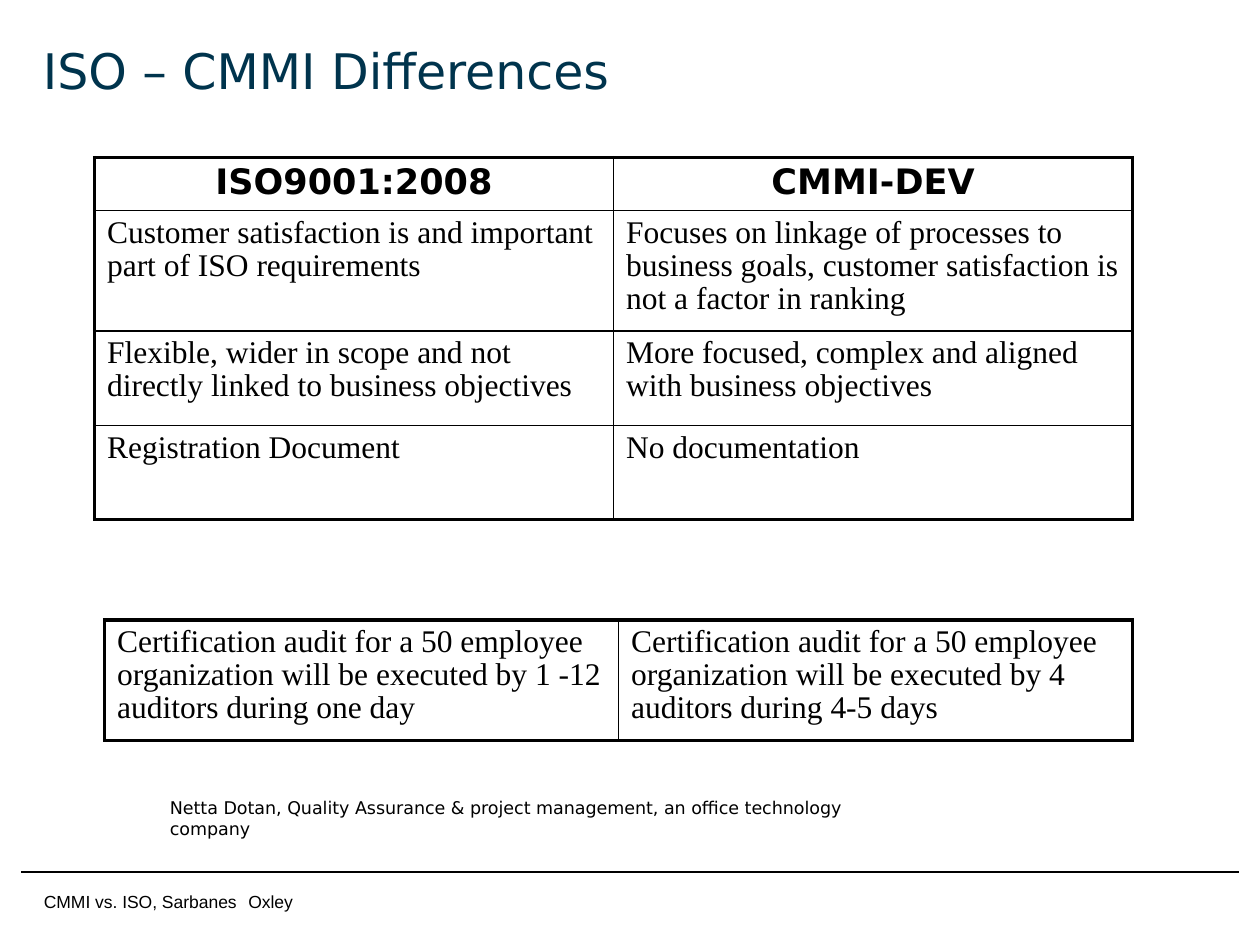
from dataclasses import dataclass

from lxml.etree import SubElement
from pptx import Presentation
from pptx.dml.color import RGBColor as Color
from pptx.enum.shapes import MSO_CONNECTOR as Link
from pptx.enum.text import MSO_ANCHOR as Anchor, MSO_AUTO_SIZE as Fit, PP_ALIGN as Align
from pptx.oxml.ns import qn
from pptx.util import Inches, Pt


@dataclass(frozen=True)
class Theme:
    """Colours, fonts, type sizes and line widths."""
    ink: str = "000000"
    navy: str = "00344D"
    sans: str = "DejaVu Sans"
    serif: str = "Times New Roman"
    plain: str = "Arial"
    title: int = 28
    gap: int = 24
    head: int = 20
    body: int = 18
    note: int = 10
    thick: float = 2.25
    thin: float = 1
    rule: float = 1.25
    lead: float = 0.95


T = Theme()
HEAD = {"name": T.sans, "size": Pt(T.head), "bold": True}
BODY = {"name": T.serif, "size": Pt(T.body), "bold": False}
NOTE = {"name": T.sans, "size": Pt(T.note)}
FOOT = {"name": T.plain, "size": Pt(T.note)}
GAP = {"name": T.plain, "size": Pt(T.gap)}
TITLE = {"name": T.sans, "size": Pt(T.title)}

DIFFS = [
    ("ISO9001:2008", "CMMI-DEV"),
    ("Customer satisfaction is and important part of ISO requirements",
     "Focuses on linkage of processes to business goals, customer satisfaction is "
     "not a factor in ranking"),
    ("Flexible, wider in scope and not directly linked to business objectives",
     "More focused, complex and aligned with business objectives"),
    ("Registration Document", "No documentation"),
]
AUDITS = [
    ("Certification audit for a 50 employee organization will be executed by 1 -12 "
     "auditors during one day",
     "Certification audit for a 50 employee organization will be executed by 4 "
     "auditors during 4-5 days"),
]


def add_run(para, text, form, color=T.ink):
    """Append a run with the given font values."""
    run = para.add_run()
    run.text = text
    for key, value in form.items():
        setattr(run.font, key, value)
    run.font.color.rgb = Color.from_string(color)


def add_title(slide, text):
    """Place and fill the title."""
    shape = slide.shapes.title
    box = {"left": 0.24, "top": 0.2, "width": 9.26, "height": 0.75}
    for key, value in box.items():
        setattr(shape, key, Inches(value))
    frame = shape.text_frame
    frame.auto_size, frame.vertical_anchor = Fit.NONE, Anchor.MIDDLE
    para = frame.paragraphs[0]
    para.alignment, para.line_spacing = Align.LEFT, T.lead
    add_run(para, text, TITLE, T.navy)


def add_text(slide, box, runs, anchor=Anchor.TOP):
    """Add a one-line text box made of runs."""
    frame = slide.shapes.add_textbox(*map(Inches, box)).text_frame
    frame.word_wrap, frame.vertical_anchor = False, anchor
    for text, form in runs:
        add_run(frame.paragraphs[0], text, form)


def add_rule(slide, left, right, top):
    """Draw a level line without shadow."""
    line = slide.shapes.add_connector(
        Link.STRAIGHT, Inches(left), Inches(top), Inches(right), Inches(top))
    line.line.width = Pt(T.rule)
    line.line.color.rgb = Color.from_string(T.ink)
    SubElement(line._element.spPr, qn("a:effectLst"))


def set_edges(cell, outer):
    """Draw thick outer and thin inner cell borders."""
    props = cell._tc.get_or_add_tcPr()
    for side, thick in outer.items():
        width = Pt(T.thick if thick else T.thin)
        edge = SubElement(props, qn(f"a:ln{side}"), w=str(width))
        fill = SubElement(edge, qn("a:solidFill"))
        SubElement(fill, qn("a:srgbClr"), val=T.ink)


def add_grid(slide, left, top, col, highs, rows, header=False):
    """Add a framed table with equal columns."""
    wide = len(rows[0])
    table = slide.shapes.add_table(
        len(rows), wide, Inches(left), Inches(top),
        Inches(col * wide), Inches(sum(highs))).table
    table.first_row = table.horz_banding = False
    for part in table.columns:
        part.width = Inches(col)
    for y, (row, high) in enumerate(zip(rows, highs)):
        table.rows[y].height = Inches(high)
        for x, text in enumerate(row):
            cell = table.cell(y, x)
            set_edges(cell, {"L": x == 0, "R": x == wide - 1,
                             "T": y == 0, "B": y == len(rows) - 1})
            cell.fill.background()
            top_row = header and y == 0
            para = cell.text_frame.paragraphs[0]
            para.line_spacing = T.lead
            para.alignment = Align.CENTER if top_row else Align.LEFT
            add_run(para, text, HEAD if top_row else BODY)


def main():
    """Build and save the slide."""
    deck = Presentation()
    deck.slide_width, deck.slide_height = Inches(10), Inches(7.5)
    slide = deck.slides.add_slide(deck.slide_layouts.get_by_name("Title Only"))
    add_text(slide, (0.25, 6.83, 2.2, 0.5),
             [("CMMI vs. ISO, Sarbanes", FOOT), (" ", GAP), ("Oxley", FOOT)], Anchor.BOTTOM)
    add_rule(slide, 0.17, 9.83, 6.92)
    add_title(slide, "ISO – CMMI Differences")
    add_grid(slide, 0.75, 1.25, 4.12, (0.42, 0.89, 0.75, 0.75), DIFFS, True)
    add_grid(slide, 0.83, 4.92, 4.08, (0.92,), AUDITS)
    add_text(slide, (1.25, 6.28, 6.05, 0.27),
             [("Netta Dotan, Quality Assurance & project management, "
               "an office technology company", NOTE)])
    deck.save("out.pptx")


if __name__ == "__main__":
    main()
